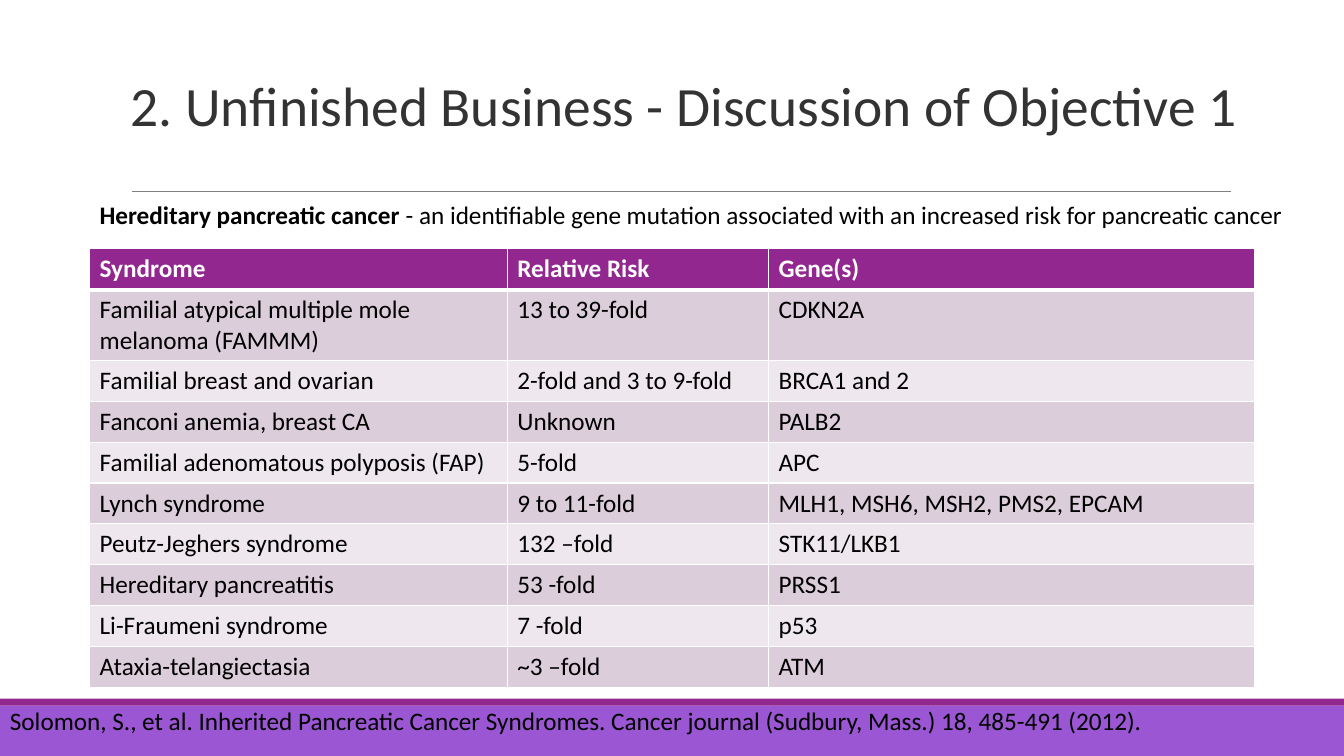
from pptx import Presentation
from pptx.dml.color import RGBColor
from pptx.enum.shapes import MSO_CONNECTOR, MSO_SHAPE
from pptx.enum.text import MSO_ANCHOR
from pptx.oxml.ns import qn
from pptx.util import Pt
from lxml.etree import SubElement

FONT = "Calibri"
PURPLE, VIOLET, WHITE, BLACK = "92278F", "9B57D3", "FFFFFF", "000000"
BANDS = ["DCCDDB", "EEE8EE"]
WIDTHS = [298.4, 186.6, 347.2]
ROWS = [
    ("Syndrome", "Relative Risk", "Gene(s)"),
    ("Familial atypical multiple mole melanoma (FAMMM)", "13 to 39-fold", "CDKN2A"),
    ("Familial breast and ovarian", "2-fold and 3 to 9-fold", "BRCA1 and 2"),
    ("Fanconi anemia, breast CA", "Unknown", "PALB2"),
    ("Familial adenomatous polyposis (FAP)", "5-fold", "APC"),
    ("Lynch syndrome", "9 to 11-fold", "MLH1, MSH6, MSH2, PMS2, EPCAM"),
    ("Peutz-Jeghers syndrome", "132 –fold", "STK11/LKB1"),
    ("Hereditary pancreatitis", "53 -fold", "PRSS1"),
    ("Li-Fraumeni syndrome", "7 -fold", "p53"),
    ("Ataxia-telangiectasia", "~3 –fold", "ATM"),
]


def color(code):
    return RGBColor.from_string(code)


def write(para, text, size=18, ink=BLACK, bold=False):
    run = para.add_run()
    run.text = text
    font = run.font
    font.name, font.size, font.bold = FONT, Pt(size), bold
    font.color.rgb = color(ink)


def text_box(slide, box, anchor=MSO_ANCHOR.TOP):
    frame = slide.shapes.add_textbox(*map(Pt, box)).text_frame
    frame.word_wrap = True
    frame.vertical_anchor = anchor
    return frame.paragraphs[0]


def bar(slide, box, fill):
    shape = slide.shapes.add_shape(MSO_SHAPE.RECTANGLE, *map(Pt, box))
    shape.shadow.inherit = False
    shape.fill.solid()
    shape.fill.fore_color.rgb = color(fill)
    shape.line.fill.background()


def border(cell, side, width):
    props = cell._tc.get_or_add_tcPr()
    line = SubElement(props, qn(f"a:ln{side}"), w=str(Pt(width)))
    fill = SubElement(line, qn("a:solidFill"))
    SubElement(fill, qn("a:srgbClr"), val=WHITE)


def header(slide, box):
    left, top, width, height = box
    # Title
    para = text_box(slide, (left, top, width, height), MSO_ANCHOR.BOTTOM)
    para.line_spacing = 0.85
    write(para, "2. Unfinished Business - Discussion of Objective 1", 39.6, "333333")
    # Rule below the title
    start, level = left + 8, top + height + 34.6
    rule = slide.shapes.add_connector(
        MSO_CONNECTOR.STRAIGHT, Pt(start), Pt(level), Pt(start + 784.8), Pt(level))
    rule.line.color.rgb = color("808080")
    rule.line.width = Pt(0.5)
    SubElement(rule._element.spPr, qn("a:effectLst"))


def lead(slide, box):
    para = text_box(slide, box)
    write(para, "Hereditary pancreatic cancer ", bold=True)
    write(para, "- an identifiable gene mutation associated with "
                "an increased risk for pancreatic cancer")


def gene_table(slide, box):
    table = slide.shapes.add_table(len(ROWS), len(WIDTHS), *map(Pt, box)).table
    for col, width in zip(table.columns, WIDTHS):
        col.width = Pt(width)
    for r, row in enumerate(ROWS):
        table.rows[r].height = Pt(29.2)
        head = r == 0
        for c, text in enumerate(row):
            cell = table.cell(r, c)
            write(cell.text_frame.paragraphs[0], text,
                  ink=WHITE if head else BLACK, bold=head)
            # Borders come before the fill in the cell's XML
            for side in "LRTB":
                thick = (head and side == "B") or (r == 1 and side == "T")
                border(cell, side, 3 if thick else 1)
            cell.fill.solid()
            cell.fill.fore_color.rgb = color(PURPLE if head else BANDS[(r - 1) % 2])


def footer(slide, box):
    left, top, width, height = box
    bar(slide, (left, top + 5, width, height - 5), VIOLET)
    bar(slide, (left, top, width, 5), PURPLE)
    # Citation
    para = text_box(slide, (left, top + 1.4, width + 25.7, 29))
    write(para, "Solomon, S., et al. Inherited Pancreatic Cancer Syndromes. "
                "Cancer journal (Sudbury, Mass.) 18, 485-491 (2012).")


def main():
    deck = Presentation()
    deck.slide_width, deck.slide_height = Pt(960), Pt(540)
    slide = deck.slides.add_slide(deck.slide_layouts[6])
    footer(slide, (0, 499, 960, 41))
    header(slide, (86.4, 16.6, 809.3, 85.6))
    lead(slide, (64, 139, 907, 29))
    gene_table(slide, (64, 177.8, sum(WIDTHS), 29.2 * len(ROWS)))
    deck.save("out.pptx")


if __name__ == "__main__":
    main()
